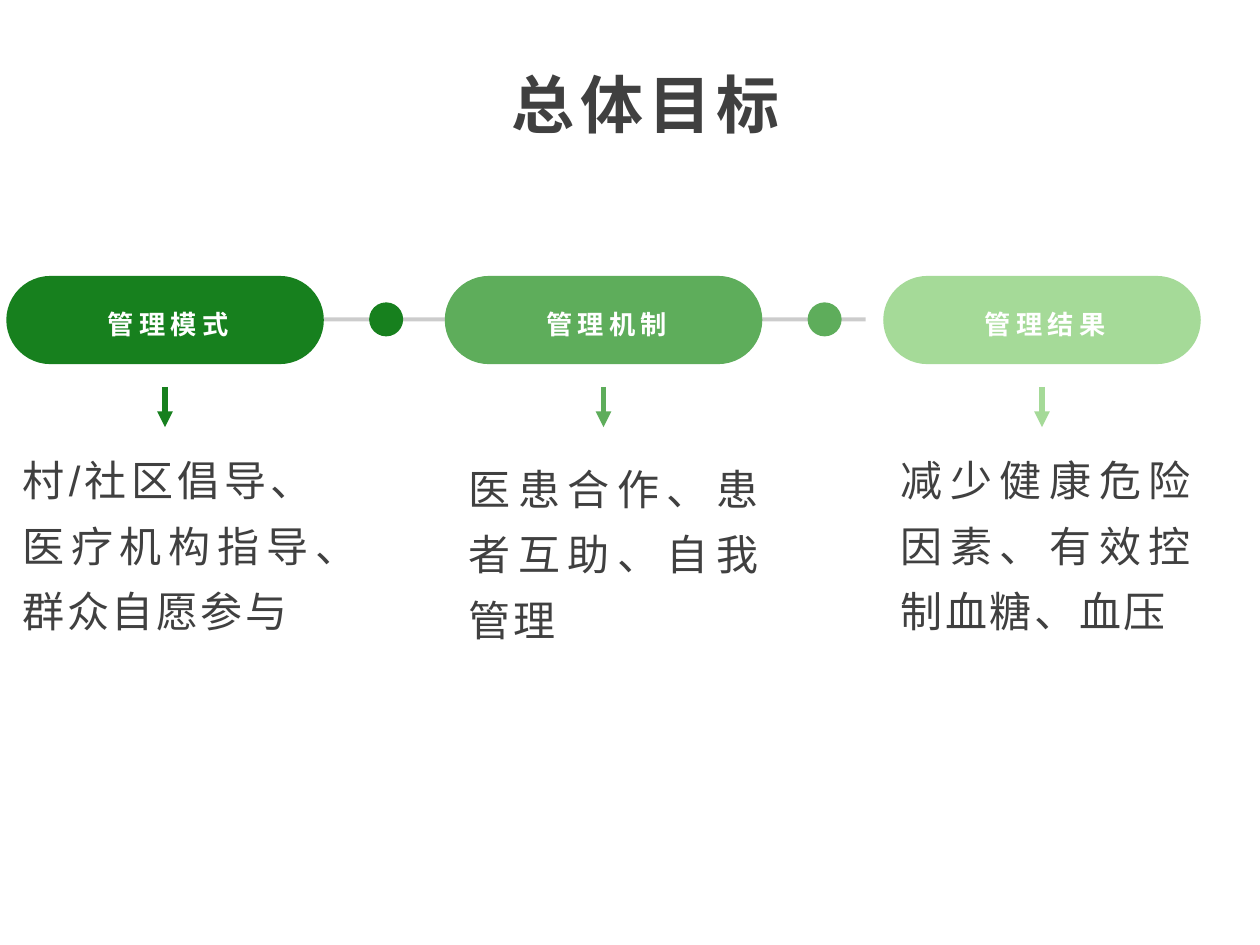
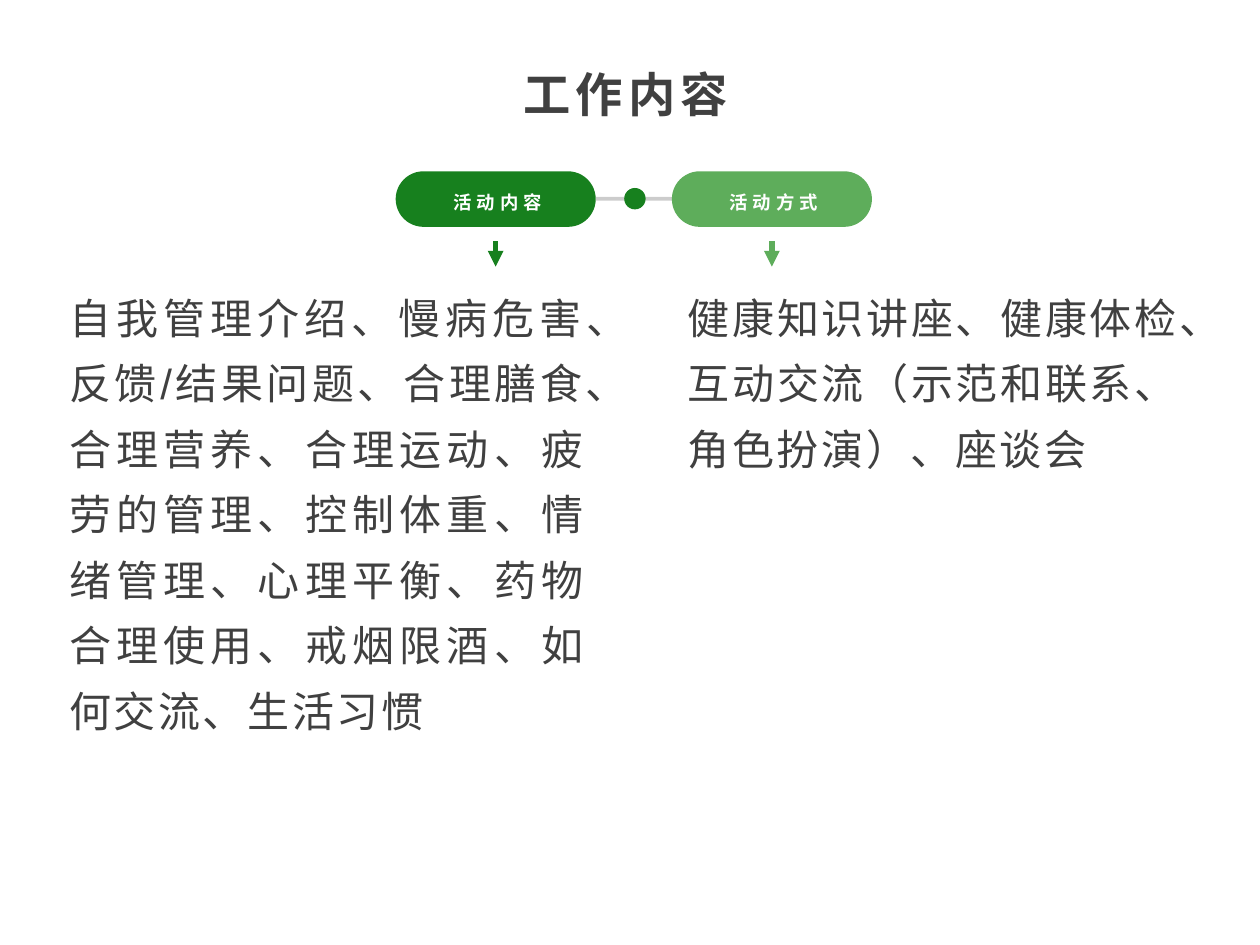
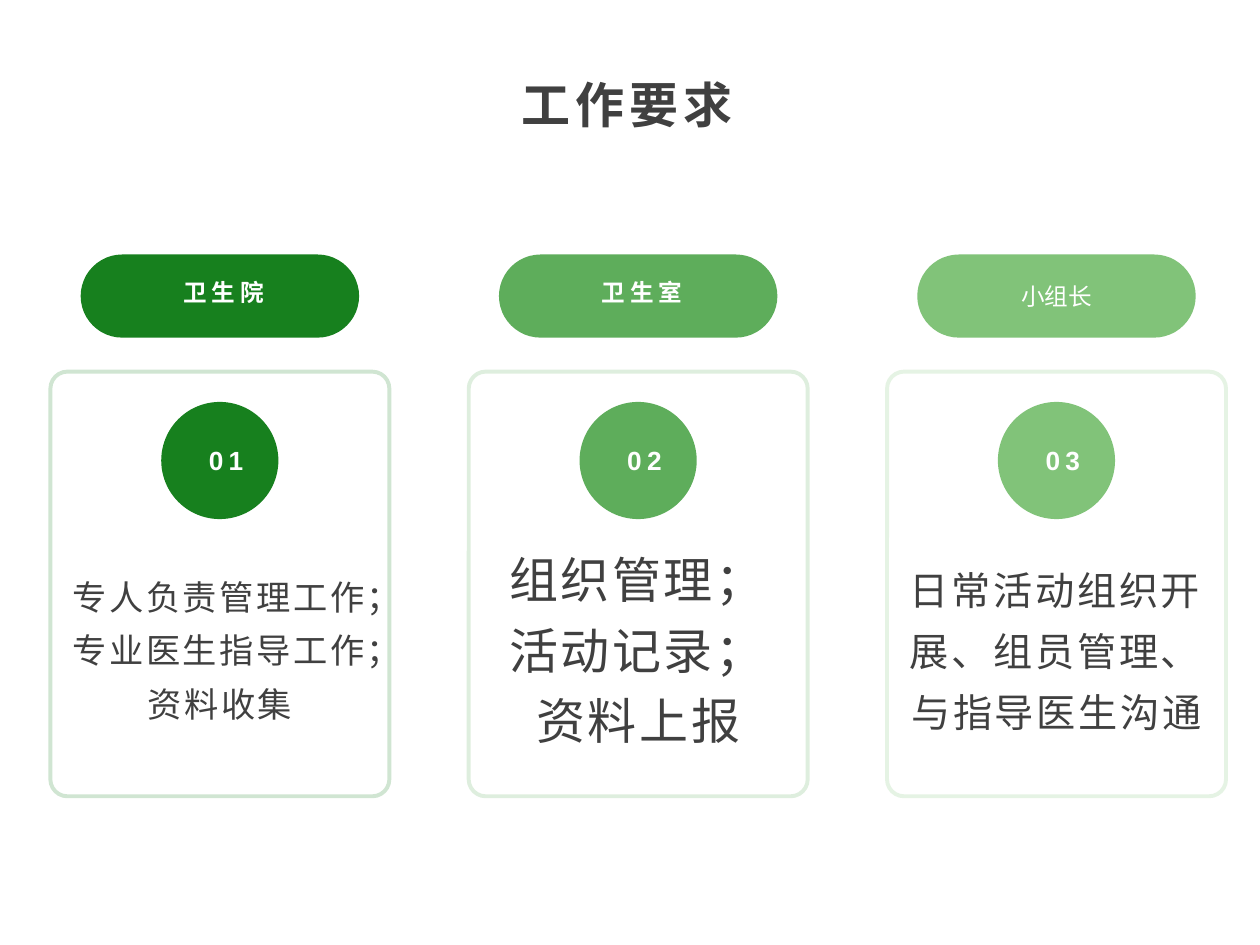
from dataclasses import dataclass

from lxml import etree
from pptx import Presentation
from pptx import util as u
from pptx.dml.color import RGBColor
from pptx.enum import lang, shapes, text
from pptx.oxml.ns import qn

COLORS = {
    "ink": "404040",
    "rail": "000000",
    "white": "FFFFFF",
    "deep": "17801E",
    "mid": "5EAD5B",
    "light": "81C379",
    "pale": "A5DA98",
}
FONT = "Arial"
SLIDE_WIDTH, SLIDE_HEIGHT = u.Inches(10), u.Inches(7.5)
COLUMNS, ROWS = 100, 75
STEP_PITCH = 34.8
CARD_PITCH = 33.2
CENTER, JUSTIFY = text.PP_ALIGN.CENTER, text.PP_ALIGN.JUSTIFY
TOP, MIDDLE = text.MSO_ANCHOR.TOP, text.MSO_ANCHOR.MIDDLE
PILL, OVAL = shapes.MSO_SHAPE.ROUNDED_RECTANGLE, shapes.MSO_SHAPE.OVAL


@dataclass(frozen=True)
class Box:
    left: float
    top: float
    width: float
    height: float

    def emu(self) -> tuple[int, int, int, int]:
        return x(self.left), y(self.top), x(self.width), y(self.height)


@dataclass(frozen=True)
class Style:
    size: float
    color: str = "ink"
    bold: bool = False
    tracking: float = 0
    spacing: float = 1.0
    align: text.PP_ALIGN = CENTER
    anchor: text.MSO_ANCHOR = MIDDLE


@dataclass(frozen=True)
class Step:
    label: str
    color: str
    body: str
    body_box: Box


@dataclass(frozen=True)
class Flow:
    left: float
    top: float
    scale: float
    rail_length: float
    label_size: float
    steps: tuple[Step, ...]


@dataclass(frozen=True)
class Card:
    label: str
    color: str
    body: str
    body_size: float
    body_spacing: float
    label_in_pill: bool = False


BODY = Style(24, tracking=1.5, spacing=1.3, align=JUSTIFY, anchor=TOP)
NUMBER = Style(15, "white", True, 3)
CARD_LABEL = Style(13.5, "white", True, 3, 1.1)
PILL_LABEL = Style(13.5, "white")

GOALS = Flow(0.5, 21.9, 1, 43, 15, (
    Step("管理模式", "deep", "村/社区倡导、医疗机构指导、群众自愿参与", Box(0.8, 34.4, 25.2, 24.3)),
    Step("管理机制", "mid", "医患合作、患者互助、自我管理", Box(36.2, 35.1, 25.2, 24.3)),
    Step("管理结果", "pale", "减少健康危险因素、有效控制血糖、血压", Box(70.5, 34.4, 25.2, 24.3)),
))
CONTENTS = Flow(31.4, 13.6, 0.63, 20.7, 10.5, (
    Step(
        "活动内容", "deep",
        "自我管理介绍、慢病危害、反馈/结果问题、合理膳食、合理营养、合理运动、"
        "疲劳的管理、控制体重、情绪管理、心理平衡、药物合理使用、戒烟限酒、如何交流、生活习惯",
        Box(4.5, 21.5, 43, 34),
    ),
    Step(
        "活动方式", "mid",
        "健康知识讲座、健康体检、互动交流（示范和联系、角色扮演）、座谈会",
        Box(53.6, 21.5, 41, 37.1),
    ),
))
CARDS = (
    Card("卫生院", "deep", "专人负责管理工作；专业医生指导工作；资料收集", 19.6, 1.3),
    Card("卫生室", "mid", "组织管理；活动记录；资料上报", 28, 1.2),
    Card("小组长", "light", "日常活动组织开展、组员管理、与指导医生沟通", 22.4, 1.3, True),
)


def x(columns: float) -> int:
    return round(SLIDE_WIDTH * columns / COLUMNS)


def y(rows: float) -> int:
    return round(SLIDE_HEIGHT * rows / ROWS)


def rgb(color: str) -> RGBColor:
    return RGBColor.from_string(COLORS[color])


def write(shape, words: str, style: Style) -> None:
    frame = shape.text_frame
    frame.word_wrap = True
    frame.vertical_anchor = style.anchor
    paragraph = frame.paragraphs[0]
    paragraph.text = words
    paragraph.alignment = style.align
    paragraph.line_spacing = style.spacing
    font = paragraph.font
    font.name, font.size, font.bold = FONT, u.Pt(style.size), style.bold
    font.language_id = lang.MSO_LANGUAGE_ID.SIMPLIFIED_CHINESE
    font.color.rgb = rgb(style.color)
    defaults = paragraph._p.pPr.find(qn("a:defRPr"))
    defaults.set("spc", str(round(style.tracking * 100)))


def add_text(slide, box: Box, words: str, style: Style) -> None:
    write(slide.shapes.add_textbox(*box.emu()), words, style)


def add_title(slide, left: float, top: float, words: str, size: float, spacing: float) -> None:
    add_text(slide, Box(left, top, 63.9, 6.8), words, Style(size, bold=True, tracking=3, spacing=spacing))


def add_solid(slide, kind: shapes.MSO_SHAPE, box: Box, color: str):
    shape = slide.shapes.add_shape(kind, *box.emu())
    shape.shadow.inherit = False
    shape.fill.solid()
    shape.fill.fore_color.rgb = rgb(color)
    shape.line.fill.background()
    if kind == PILL:
        shape.adjustments[0] = 0.5
    return shape


def style_line(line, color: str, width: float, opacity: int = 100) -> None:
    line.color.rgb = rgb(color)
    line.width = u.Pt(width)
    if opacity < 100:
        fill = line._ln.find(f".//{qn('a:srgbClr')}")
        etree.SubElement(fill, qn("a:alpha"), val=str(opacity * 1000))


def add_line(slide, start: tuple[float, float], end: tuple[float, float], color: str, width: float,
             opacity: int = 100, arrow: bool = False) -> None:
    connector = slide.shapes.add_connector(
        shapes.MSO_CONNECTOR.STRAIGHT, x(start[0]), y(start[1]), x(end[0]), y(end[1]))
    style_line(connector.line, color, width, opacity)
    if arrow:
        etree.SubElement(connector.line._ln, qn("a:tailEnd"), type="triangle")
    etree.SubElement(connector._element.spPr, qn("a:effectLst"))


def add_flow(slide, flow: Flow) -> None:
    scale = flow.scale

    def place(index: int, left: float, top: float, width: float, height: float) -> Box:
        return Box(flow.left + (index * STEP_PITCH + left) * scale, flow.top + top * scale,
                   width * scale, height * scale)

    rail = place(0, 25.2, 3.45, 0, 0)
    add_line(slide, (rail.left, rail.top), (rail.left + flow.rail_length, rail.top), "rail", 2.25, 20)
    label_style = Style(flow.label_size, "white", True, 3, 1.4)
    for index, step in enumerate(flow.steps):
        add_solid(slide, PILL, place(index, 0, 0, 25.2, 7), step.color)
        if index < len(flow.steps) - 1:
            add_solid(slide, OVAL, place(index, 28.8, 2.1, 2.7, 2.7), step.color)
        arrow = place(index, 12.6, 8.8, 0, 3.2)
        add_line(slide, (arrow.left, arrow.top), (arrow.left, arrow.top + arrow.height),
                 step.color, 3, arrow=True)
        add_text(slide, step.body_box, step.body, BODY)
        add_text(slide, place(index, -0.4, 0.4, 26.5, 5.9), step.label, label_style)


def add_card(slide, index: int, card: Card) -> None:
    left = 4 + index * CARD_PITCH
    frame = add_solid(slide, PILL, Box(left, 29.5, 26.9, 33.7), card.color)
    frame.adjustments[0] = 0.05
    frame.fill.background()
    style_line(frame.line, card.color, 2.25, 20)
    pill = add_solid(slide, PILL, Box(left + 2.4, 20.2, 22.1, 6.6), card.color)
    add_solid(slide, OVAL, Box(left + 8.8, 31.9, 9.3, 9.3), card.color)
    add_text(slide, Box(left + 9.3, 32.4, 9.3, 8.2), f"{index + 1:02}", NUMBER)
    add_text(slide, Box(left + 0.5, 41.9, 25.9, 18.4), card.body,
             Style(card.body_size, tracking=1.5, spacing=card.body_spacing))
    if card.label_in_pill:
        write(pill, card.label, PILL_LABEL)
    else:
        add_text(slide, Box(left + 2.6, 19.6, 22.3, 7), card.label, CARD_LABEL)


def main() -> None:
    """Build the three slides on goals, contents and requirements."""
    presentation = Presentation()
    presentation.slide_width, presentation.slide_height = SLIDE_WIDTH, SLIDE_HEIGHT
    blank = presentation.slide_layouts[6]
    goals, contents, requirements = (presentation.slides.add_slide(blank) for _ in range(3))

    add_title(goals, 19.3, 3.6, "总体目标", 36, 1.4)
    add_flow(goals, GOALS)

    add_title(contents, 17.7, 3.6, "工作内容", 27, 1.2)
    add_flow(contents, CONTENTS)

    for index, card in enumerate(CARDS):
        add_card(requirements, index, card)
    add_title(requirements, 17.8, 4.4, "工作要求", 28, 1.2)

    presentation.save("out.pptx")


if __name__ == "__main__":
    main()
